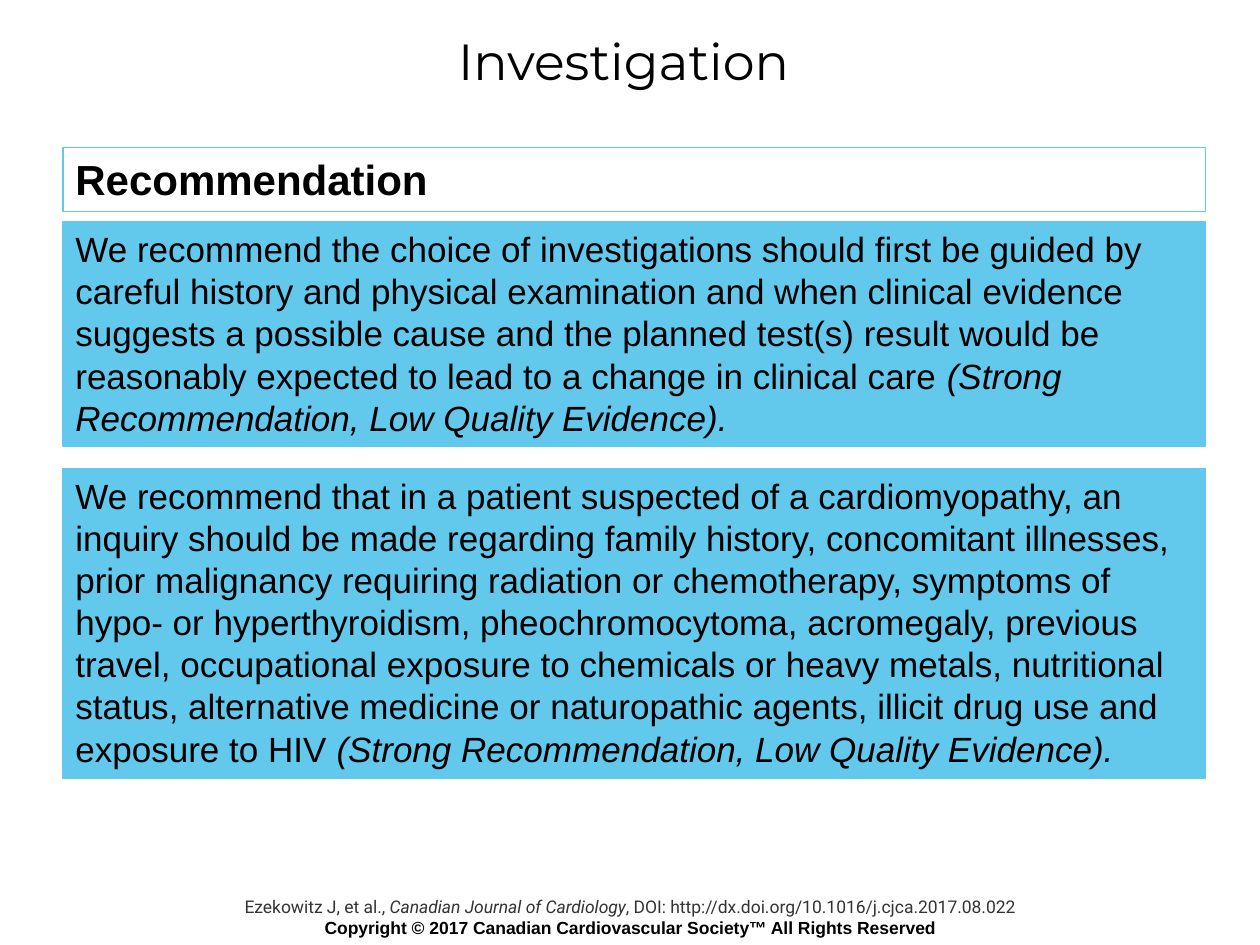
from pptx import Presentation
from pptx import util as u
from pptx.dml.color import RGBColor
from pptx.enum import shapes, text

SKY = RGBColor(0x62, 0xC8, 0xEC)
BLACK = RGBColor(0, 0, 0)
GREY = RGBColor(0x33, 0x33, 0x33)

TITLE = "Investigation"
HEADING = "Recommendation"
GRADE = "(Strong Recommendation, Low Quality Evidence)."
CHOICE = (
    "We recommend the choice of investigations should first be guided by careful "
    "history and physical examination and when clinical evidence suggests a possible "
    "cause and the planned test(s) result would be reasonably expected to lead to a "
    "change in clinical care "
)
INQUIRY = (
    "We recommend that in a patient suspected of a cardiomyopathy, an inquiry should "
    "be made regarding family history, concomitant illnesses, prior malignancy "
    "requiring radiation or chemotherapy, symptoms of hypo- or hyperthyroidism, "
    "pheochromocytoma, acromegaly, previous travel, occupational exposure to "
    "chemicals or heavy metals, nutritional status, alternative medicine or "
    "naturopathic agents, illicit drug use and exposure to HIV "
)
CITATION = [
    ("Ezekowitz J, et al., ", False),
    ("Canadian Journal of Cardiology", True),
    (", DOI: http://dx.doi.org/10.1016/j.cjca.2017.08.022", False),
]
COPYRIGHT = [("Copyright © 2017 Canadian Cardiovascular Society™ All Rights Reserved", False)]

PANELS = [
    (1.17, 0.51, [(HEADING, False)], 24, True, False),
    (1.76, 1.78, [(CHOICE, False), (GRADE, True)], 20, False, True),
    (3.72, 2.46, [(INQUIRY, False), (GRADE, True)], 20, False, True),
]


def write(paragraph, runs, size, face="Arial", color=BLACK, bold=False,
          align=text.PP_ALIGN.LEFT):
    paragraph.alignment = align
    font = paragraph.font
    font.size, font.name, font.bold = u.Pt(size), face, bold
    font.color.rgb = color
    for words, italic in runs:
        run = paragraph.add_run()
        run.text = words
        if italic:
            run.font.italic = True


def add_panel(slide, top, height, runs, size, bold, filled):
    panel = slide.shapes.add_shape(
        shapes.MSO_SHAPE.RECTANGLE,
        u.Inches(0.5), u.Inches(top), u.Inches(9.07), u.Inches(height))
    panel.shadow.inherit = False
    if filled:
        panel.fill.solid()
        panel.fill.fore_color.rgb = SKY
    else:
        panel.fill.background()
    panel.line.color.rgb = SKY
    panel.line.width = u.Pt(0.75)
    frame = panel.text_frame
    frame.word_wrap = True
    frame.vertical_anchor = text.MSO_ANCHOR.TOP
    write(frame.paragraphs[0], runs, size, bold=bold)


def main():
    deck = Presentation()
    deck.slide_width, deck.slide_height = u.Inches(10), u.Inches(7.5)
    slide = deck.slides.add_slide(deck.slide_layouts[5])
    center = text.PP_ALIGN.CENTER

    title = slide.shapes.title
    title.left, title.top = u.Inches(0.58), u.Inches(0.2)
    title.width, title.height = u.Inches(8.74), u.Inches(0.55)
    title.text_frame.vertical_anchor = text.MSO_ANCHOR.MIDDLE
    write(title.text_frame.paragraphs[0], [(TITLE, False)], 29, "Montserrat", align=center)

    for panel in PANELS:
        add_panel(slide, *panel)

    footer = slide.shapes.add_textbox(
        u.Inches(1.15), u.Inches(7.06), u.Inches(7.7), u.Inches(0.44)).text_frame
    footer.word_wrap = True
    write(footer.paragraphs[0], CITATION, 10, "Roboto", GREY, align=center)
    write(footer.add_paragraph(), COPYRIGHT, 10, bold=True, align=center)

    deck.save("out.pptx")


if __name__ == "__main__":
    main()
